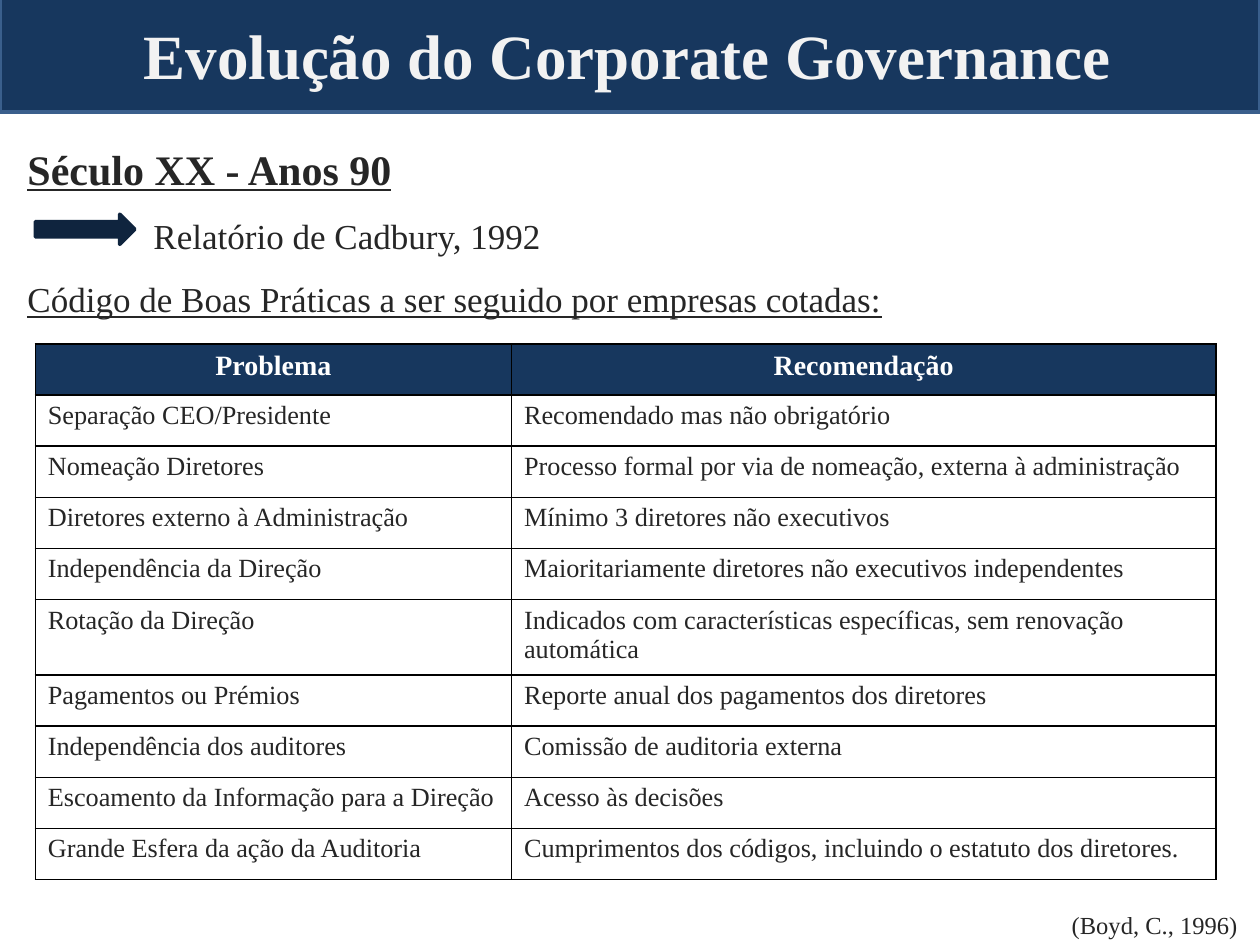
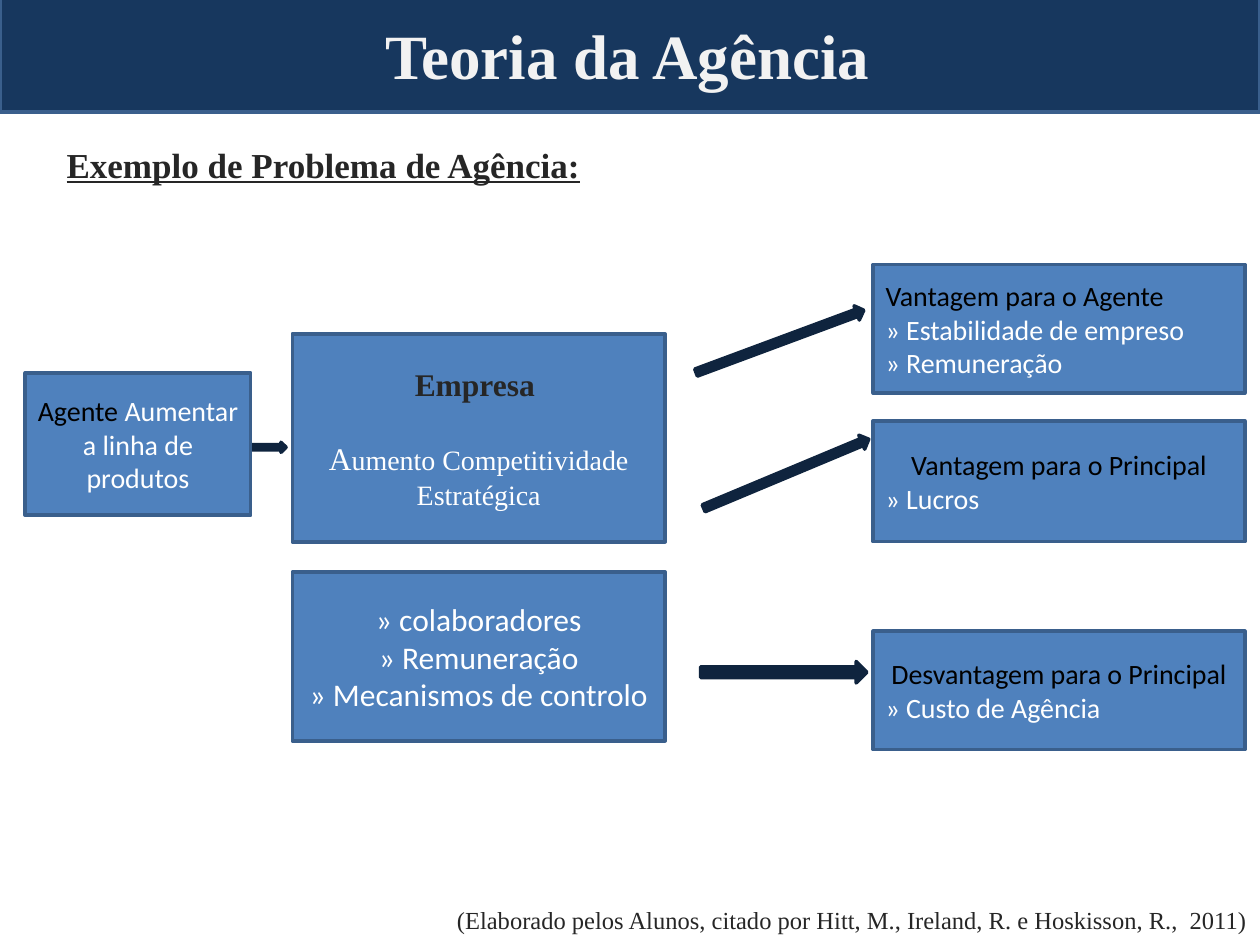
import pptx
import pptx.dml.color
import pptx.enum.shapes
import pptx.enum.text
import pptx.oxml
import pptx.oxml.ns
import pptx.util

Inches = pptx.util.Inches
Pt = pptx.util.Pt
ALIGN = pptx.enum.text.PP_ALIGN
ANCHOR = pptx.enum.text.MSO_ANCHOR
SHAPE = pptx.enum.shapes.MSO_SHAPE

COLORS = {
    "navy": "17375E",
    "edge": "3A5F8C",
    "box": "4F81BD",
    "arrow": "0F243E",
    "title": "F2F2F2",
    "text": "262626",
    "black": "000000",
    "white": "FFFFFF",
}


def style(size, color, name="Times New Roman", **extra):
    return {"size": Pt(size), "color": color, "name": name, **extra}


TITLE = style(36, "title", bold=True)
PERIOD = style(24, "text", bold=True, underline=True)
EXAMPLE = style(20, "text", bold=True, underline=True)
BODY = style(20, "text")
BODY_UNDERLINED = style(20, "text", underline=True)
SOURCE = style(14, "text")
TABLE_HEADER = style(16, "white", bold=True)
TABLE_BODY = style(15, "text")
BOX_HEADING = style(16, "black", "Calibri")
BOX_TEXT = style(16, "white", "Calibri")
CONTROL_TEXT = style(18, "white", "Calibri")
COMPANY_NAME = style(18, "text", bold=True)
COMPANY_INITIAL = style(18, "white")
COMPANY_TEXT = style(16, "white")

CODE_ROWS = [
    ("Problema", "Recomendação"),
    ("Separação CEO/Presidente", "Recomendado mas não obrigatório"),
    ("Nomeação Diretores", "Processo formal por via de nomeação, externa à administração"),
    ("Diretores externo à Administração", "Mínimo 3 diretores não executivos"),
    ("Independência da Direção", "Maioritariamente diretores não executivos independentes"),
    ("Rotação da Direção",
     "Indicados com características específicas, sem renovação automática"),
    ("Pagamentos ou Prémios", "Reporte anual dos pagamentos dos diretores"),
    ("Independência dos auditores", "Comissão de auditoria externa"),
    ("Escoamento da Informação para a Direção", "Acesso às decisões"),
    ("Grande Esfera da ação da Auditoria",
     "Cumprimentos dos códigos, incluindo o estatuto dos diretores."),
]
TALL_ROW = 5


def rgb(color):
    return pptx.dml.color.RGBColor.from_string(COLORS[color])


def write_paragraphs(text_frame, paragraphs):
    """Fill a frame from (runs, paragraph formats) pairs; a run is (text, style)."""
    for index, (runs, formats) in enumerate(paragraphs):
        paragraph = text_frame.paragraphs[0] if index == 0 else text_frame.add_paragraph()
        for key, value in formats.items():
            setattr(paragraph, key, value)
        for text, run_style in runs:
            run = paragraph.add_run()
            run.text = text
            for key, value in run_style.items():
                if key == "color":
                    run.font.color.rgb = rgb(value)
                else:
                    setattr(run.font, key, value)


def line(text, text_style, alignment=ALIGN.LEFT, **formats):
    return [(text, text_style)], {"alignment": alignment, **formats}


def add_text(slide, left, top, width, height, paragraphs, anchor=ANCHOR.TOP):
    frame = slide.shapes.add_textbox(*map(Inches, (left, top, width, height))).text_frame
    frame.word_wrap = True
    frame.vertical_anchor = anchor
    write_paragraphs(frame, paragraphs)
    return frame


def add_filled_shape(slide, kind, left, top, width, height, fill, edge):
    shape = slide.shapes.add_shape(kind, *map(Inches, (left, top, width, height)))
    shape.shadow.inherit = False
    shape.fill.solid()
    shape.fill.fore_color.rgb = rgb(fill)
    shape.line.color.rgb = rgb(edge)
    shape.line.width = Pt(2)
    return shape


def add_title(slide, text):
    add_filled_shape(slide, SHAPE.RECTANGLE, 0, -0.03, 10, 0.92, "navy", "edge")
    add_text(slide, -0.04, -0.03, 10.04, 0.92, [line(text, TITLE, ALIGN.CENTER)],
             ANCHOR.MIDDLE)


def add_source(slide, text, right, top):
    width = 7
    add_text(slide, right - width, top, width, 0.33, [line(text, SOURCE, ALIGN.RIGHT)])


def add_arrow(slide, left, top, width, height, rotation=0):
    arrow = add_filled_shape(slide, SHAPE.RIGHT_ARROW, left, top, width, height,
                             "arrow", "arrow")
    arrow.rotation = rotation


def add_box(slide, left, top, width, height, paragraphs):
    box = add_filled_shape(slide, SHAPE.RECTANGLE, left, top, width, height, "box", "edge")
    box.text_frame.word_wrap = True
    box.text_frame.vertical_anchor = ANCHOR.MIDDLE
    write_paragraphs(box.text_frame, paragraphs)


def add_outcome(slide, top, height, heading, points, alignment=ALIGN.CENTER):
    """Add a box of the right-hand column: a black heading over white points."""
    paragraphs = [line(heading, BOX_HEADING, alignment)]
    paragraphs += [line(point, BOX_TEXT) for point in points]
    add_box(slide, 6.93, top, 2.95, height, paragraphs)


def add_cell_borders(cell):
    properties = cell._tc.get_or_add_tcPr()
    for side in ("lnL", "lnR", "lnT", "lnB"):
        properties.append(pptx.oxml.parse_xml(
            f'<a:{side} {pptx.oxml.ns.nsdecls("a")} w="{Pt(1)}"><a:solidFill>'
            f'<a:srgbClr val="{COLORS["black"]}"/></a:solidFill></a:{side}>'))


def add_code_table(slide, left, top, column_widths, height, tall_height):
    """Add the table; every row but the two-line one shares the height left over."""
    frame = slide.shapes.add_table(len(CODE_ROWS), len(column_widths), Inches(left),
                                   Inches(top), Inches(sum(column_widths)), Inches(height))
    table = frame.table
    table.first_row = table.horz_banding = False
    for column, width in zip(table.columns, column_widths):
        column.width = Inches(width)
    row_height = (height - tall_height) / (len(CODE_ROWS) - 1)
    for row_index, texts in enumerate(CODE_ROWS):
        row = table.rows[row_index]
        row.height = Inches(tall_height if row_index == TALL_ROW else row_height)
        for cell, text in zip(row.cells, texts):
            add_cell_borders(cell)
            if row_index == 0:
                cell.fill.solid()
                cell.fill.fore_color.rgb = rgb("navy")
                paragraph = line(text, TABLE_HEADER, ALIGN.CENTER)
            else:
                cell.fill.background()
                paragraph = line(text, TABLE_BODY)
            write_paragraphs(cell.text_frame, [paragraph])


def build_evolution(slide):
    frame = add_text(slide, 0.12, 0.89, 9.8, 1.8, [
        line("Século XX - Anos 90", PERIOD, line_spacing=1.5),
        line("Relatório de Cadbury, 1992", BODY, line_spacing=1.5),
        line("Código de Boas Práticas a ser seguido por empresas cotadas:",
             BODY_UNDERLINED, line_spacing=1.5),
    ])
    report_properties = frame.paragraphs[1]._p.get_or_add_pPr()
    report_properties.set("marL", str(Inches(1)))
    add_arrow(slide, 0.28, 1.7, 0.79, 0.24)
    add_code_table(slide, 0.28, 2.73, (3.78, 5.59), 4.25, 0.6)
    add_title(slide, "Evolução do Corporate Governance")
    add_source(slide, "(Boyd, C., 1996)", 9.92, 7.17)


def build_agency(slide):
    frame = add_text(slide, 0.43, 0.92, 9.37, 0.55,
                     [line("Exemplo de Problema de Agência:\t", EXAMPLE, line_spacing=1.5)])
    # The underlined tab carries the rule on past the heading.
    frame.paragraphs[0]._p.get_or_add_pPr().append(pptx.oxml.parse_xml(
        f'<a:tabLst {pptx.oxml.ns.nsdecls("a")}>'
        f'<a:tab pos="{Inches(6.8)}" algn="l"/></a:tabLst>'))
    add_title(slide, "Teoria da Agência")
    add_source(slide, "(Elaborado pelos Alunos, citado por Hitt, M., Ireland, R. "
                      "e Hoskisson, R.,  2011)", 10, 7.13)

    add_arrow(slide, 1.69, 3.51, 0.58, 0.08)
    add_box(slide, 0.2, 2.96, 1.79, 1.13, [
        ([("Agente", BOX_HEADING), (" Aumentar a linha de produtos", BOX_TEXT)],
         {"alignment": ALIGN.CENTER}),
    ])
    add_box(slide, 2.32, 2.65, 2.96, 1.65, [
        line("Empresa ", COMPANY_NAME, ALIGN.CENTER),
        ([("A", COMPANY_INITIAL), ("umento Competitividade Estratégica", COMPANY_TEXT)],
         {"alignment": ALIGN.CENTER, "space_before": Pt(21)}),
    ])
    add_box(slide, 2.32, 4.54, 2.96, 1.34, [
        line(text, CONTROL_TEXT, ALIGN.CENTER)
        for text in ("» colaboradores", "» Remuneração", "» Mecanismos de controlo")
    ])

    add_outcome(slide, 2.1, 1.02, "Vantagem para o Agente",
                ["» Estabilidade de empreso", "» Remuneração"], ALIGN.LEFT)
    add_outcome(slide, 3.34, 0.96, "Vantagem para o Principal", ["» Lucros"])
    add_outcome(slide, 5.01, 0.94, "Desvantagem para o Principal", ["» Custo de Agência"])
    add_arrow(slide, 5.48, 2.65, 1.42, 0.12, 339.6)
    add_arrow(slide, 5.53, 3.7, 1.42, 0.12, 337.3)
    add_arrow(slide, 5.56, 5.25, 1.32, 0.17)


def main():
    presentation = pptx.Presentation()
    presentation.slide_width = Inches(10)
    presentation.slide_height = Inches(7.5)
    blank_layout = presentation.slide_layouts[6]
    for build in (build_evolution, build_agency):
        build(presentation.slides.add_slide(blank_layout))
    presentation.save("out.pptx")


if __name__ == "__main__":
    main()
